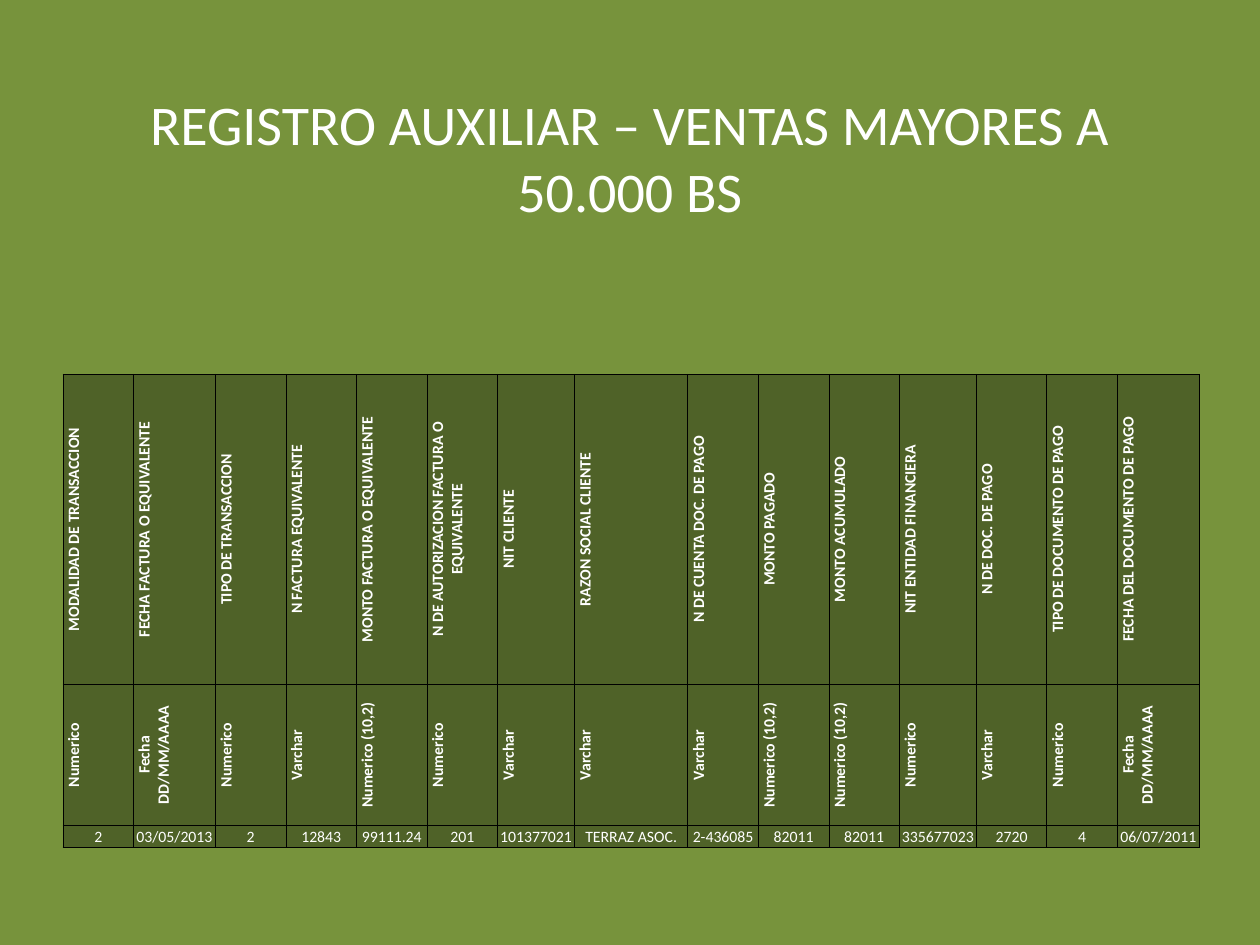
from dataclasses import dataclass

from lxml.etree import SubElement
from pptx import Presentation
from pptx.dml.color import RGBColor
from pptx.enum.text import MSO_ANCHOR, MSO_AUTO_SIZE, PP_ALIGN
from pptx.oxml.ns import qn
from pptx.util import Inches, Pt


@dataclass(frozen=True)
class Theme:
    background: str = "77933C"
    cell: str = "4F6228"
    text: str = "FFFFFF"
    border: str = "000000"
    font: str = "Calibri"
    title_size: int = 32
    table_size: int = 9
    border_width: float = 0.5


THEME = Theme()
TITLE = "REGISTRO AUXILIAR – VENTAS MAYORES A 50.000 BS"
FIELDS = [
    ("MODALIDAD DE TRANSACCION", "Numerico", "2", 0.56),
    ("FECHA FACTURA O EQUIVALENTE", "Fecha DD/MM/AAAA", "03/05/2013", 0.65),
    ("TIPO DE TRANSACCION", "Numerico", "2", 0.56),
    ("N FACTURA EQUIVALENTE", "Varchar", "12843", 0.56),
    ("MONTO FACTURA O EQUIVALENTE", "Numerico (10,2)", "99111.24", 0.56),
    ("N DE AUTORIZACION FACTURA O EQUIVALENTE", "Numerico", "201", 0.56),
    ("NIT CLIENTE", "Varchar", "101377021", 0.61),
    ("RAZON SOCIAL CLIENTE", "Varchar", "TERRAZ ASOC.", 0.9),
    ("N DE CUENTA DOC. DE PAGO", "Varchar", "2-436085", 0.56),
    ("MONTO PAGADO", "Numerico (10,2)", "82011", 0.56),
    ("MONTO ACUMULADO", "Numerico (10,2)", "82011", 0.56),
    ("NIT ENTIDAD FINANCIERA", "Numerico", "335677023", 0.61),
    ("N DE DOC. DE PAGO", "Varchar", "2720", 0.56),
    ("TIPO DE DOCUMENTO DE PAGO", "Numerico", "4", 0.56),
    ("FECHA DEL DOCUMENTO DE PAGO", "Fecha DD/MM/AAAA", "06/07/2011", 0.65),
]
ROW_HEIGHTS = [1.48, 0.85, 0.17]


def format_text(frame, size, bold=False):
    for para in frame.paragraphs:
        para.alignment = PP_ALIGN.CENTER
        for span in para.runs:
            span.font.name = THEME.font
            span.font.size = Pt(size)
            span.font.bold = bold
            span.font.color.rgb = RGBColor.from_string(THEME.text)


def set_title(page, deck):
    title = page.shapes.title
    title.left, title.width = int(deck.slide_width * 0.05), int(deck.slide_width * 0.9)
    title.top, title.height = Inches(0.94), Inches(0.61)
    frame = title.text_frame
    frame.text = TITLE
    frame.word_wrap = True
    frame.auto_size = MSO_AUTO_SIZE.NONE
    frame.vertical_anchor = MSO_ANCHOR.MIDDLE
    format_text(frame, THEME.title_size)


def add_borders(cell):
    properties = cell._tc.get_or_add_tcPr()
    for side in ("a:lnL", "a:lnR", "a:lnT", "a:lnB"):
        line = SubElement(properties, qn(side), w=str(Pt(THEME.border_width)))
        fill = SubElement(line, qn("a:solidFill"))
        SubElement(fill, qn("a:srgbClr"), val=THEME.border)


def format_cell(cell, text, is_header):
    cell.text_frame.text = text
    format_text(cell.text_frame, THEME.table_size, bold=is_header)
    cell.margin_left = cell.margin_top = cell.margin_right = Inches(0.01)
    cell.margin_bottom = 0
    cell.vertical_anchor = MSO_ANCHOR.MIDDLE if is_header else MSO_ANCHOR.BOTTOM
    add_borders(cell)
    cell.fill.solid()
    cell.fill.fore_color.rgb = RGBColor.from_string(THEME.cell)
    if is_header:
        cell._tc.get_or_add_tcPr().set("vert", "vert270")


def add_register(page, deck):
    *headings, values, widths = zip(*FIELDS)
    rows = [*headings, values]
    table = page.shapes.add_table(
        len(rows), len(FIELDS), int(deck.slide_width * 0.05), Inches(2.97),
        Inches(sum(widths)), Inches(sum(ROW_HEIGHTS)),
    ).table
    table.horz_banding = False
    for column, width in zip(table.columns, widths):
        column.width = Inches(width)
    for index, (row, height, texts) in enumerate(zip(table.rows, ROW_HEIGHTS, rows)):
        row.height = Inches(height)
        for cell, text in zip(row.cells, texts):
            format_cell(cell, text, is_header=index < len(headings))


def main():
    deck = Presentation()
    deck.slide_width, deck.slide_height = Inches(10), Inches(7.5)
    page = deck.slides.add_slide(deck.slide_layouts[5])
    page.background.fill.solid()
    page.background.fill.fore_color.rgb = RGBColor.from_string(THEME.background)
    set_title(page, deck)
    add_register(page, deck)
    deck.save("out.pptx")


if __name__ == "__main__":
    main()
